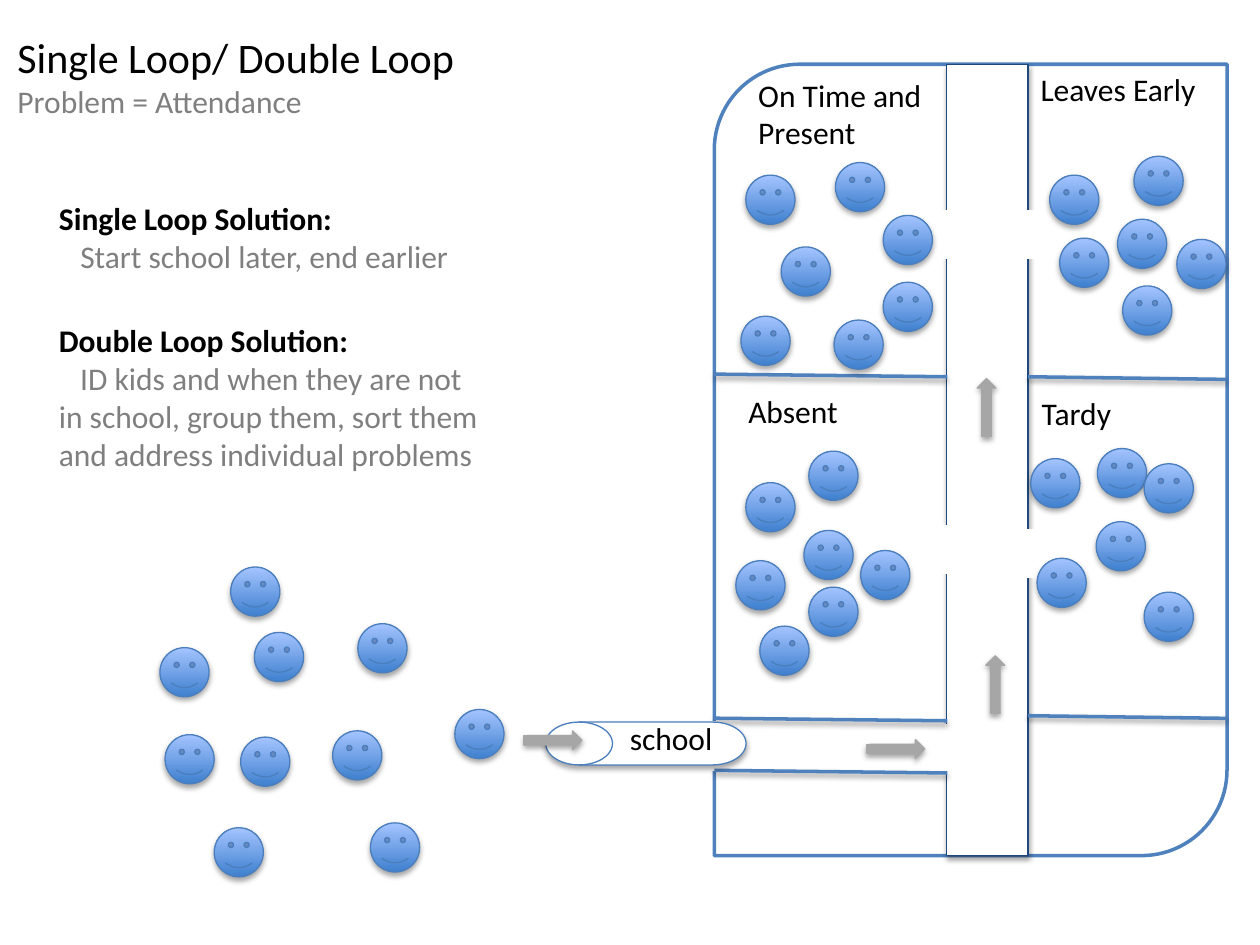
from pptx import Presentation
from pptx.dml.color import RGBColor
from pptx.enum.shapes import MSO_CONNECTOR, MSO_SHAPE as Preset
from pptx.enum.text import MSO_AUTO_SIZE
from pptx.oxml import parse_xml
from pptx.oxml.ns import nsdecls
from pptx.util import Pt

WHITE = RGBColor(0xFF, 0xFF, 0xFF)
BLACK = RGBColor(0x00, 0x00, 0x00)
GRAY = RGBColor(0x7F, 0x7F, 0x7F)
ARROW_GRAY = RGBColor(0xA6, 0xA6, 0xA6)
WALL_BLUE = RGBColor(0x4F, 0x81, 0xBD)
HALL_BLUE = RGBColor(0x1F, 0x49, 0x7D)
EDGE_BLUE = RGBColor(0x4B, 0x7E, 0xBC)
FACE_DARK = RGBColor(0x3F, 0x80, 0xCE)
FACE_LIGHT = RGBColor(0xA4, 0xC4, 0xFF)

FONT = "Calibri"
FACE_SIZE = 28.1
DOOR_SIZE = (28.8, 27.4)
ARROW_SIZE = (33.1, 10.8)
WALL_DROP = 1.5
LEFT_WALL = (408.2, 541.4)
RIGHT_WALL = (587.5, 700.6)

DOORS = [(398.2, 412.6), (527, 414), (573.1, 302.4),
         (526.3, 300.2), (584.6, 120.2), (526.3, 120.2)]
WALLS = [(LEFT_WALL, 213.8), (RIGHT_WALL, 215.3), (RIGHT_WALL, 409),
         (LEFT_WALL, 410.4), (LEFT_WALL, 440.2)]
STUDENTS = {
    "on time": [(423.4, 180.7), (446.4, 141.1), (476.6, 182.9), (477.4, 92.9),
                (504.7, 123.1), (504.7, 161.3), (426.2, 100.1)],
    "leaves early": [(599.8, 100.1), (605.5, 136.1), (641.5, 163.4),
                     (672.5, 136.8), (638.6, 125.3), (648, 89.3)],
    "absent": [(462.2, 335.5), (434.2, 357.8), (491.8, 314.6), (420.5, 320.4),
               (459.4, 303.1), (426.2, 275.8), (462.2, 257.8)],
    "tardy": [(592.6, 319), (589, 262.1), (626.4, 298.1), (653.8, 338.4),
              (627.1, 256.3), (653.8, 265)],
    "outside": [(137.5, 421.2), (131.8, 324), (145.4, 361.4), (259.9, 405.4),
                (211.7, 470.2), (122.4, 473), (204.5, 356.4), (94.3, 419.8),
                (91.4, 370.1), (190.1, 417.6)],
}
ROOM_LABELS = [("Absent", 420.5, 220.3, 66.2, 28.8),
               ("Tardy", 588.2, 221.8, 56.2, 28.8),
               ("On Time and\nPresent", 426.2, 39.6, 108.7, 51.1),
               ("Leaves Early", 587.5, 36.7, 104.4, 28.8)]


def add_shadow(shape, opacity=35):
    """Add a soft shadow below; call it after fill and line are set."""
    properties = shape._element.spPr
    properties.append(parse_xml(
        f'<a:effectLst {nsdecls("a")}>'
        f'<a:outerShdw blurRad="{Pt(3.1)}" dist="{Pt(1.8)}" dir="5400000" rotWithShape="0">'
        f'<a:srgbClr val="000000"><a:alpha val="{opacity * 1000}"/></a:srgbClr>'
        '</a:outerShdw></a:effectLst>'))


def add_outlined(slide, preset, left, top, width, height, line_color,
                 fill_color=WHITE, line_width=0.75, shadow=False, rotation=0):
    shape = slide.shapes.add_shape(preset, Pt(left), Pt(top), Pt(width), Pt(height))
    shape.rotation = rotation
    shape.fill.solid()
    shape.fill.fore_color.rgb = fill_color
    shape.line.color.rgb = line_color
    shape.line.width = Pt(line_width)
    if shadow:
        add_shadow(shape)
    else:
        shape.shadow.inherit = False
    return shape


def add_wall(slide, span, top):
    left, right = span
    wall = slide.shapes.add_connector(
        MSO_CONNECTOR.STRAIGHT, Pt(left), Pt(top), Pt(right), Pt(top + WALL_DROP))
    wall.line.color.rgb = WALL_BLUE
    wall.line.width = Pt(2)
    add_shadow(wall, 38)


def add_student(slide, left, top):
    face = add_outlined(slide, Preset.SMILEY_FACE, left, top,
                        FACE_SIZE, FACE_SIZE, EDGE_BLUE, shadow=True)
    face.fill.gradient()
    face.fill.gradient_angle = 90
    for stop, color, position in zip(face.fill.gradient_stops,
                                     (FACE_DARK, FACE_LIGHT), (0, 1)):
        stop.color.rgb = color
        stop.position = position


def add_arrow(slide, left, top, rotation=0):
    add_outlined(slide, Preset.STRIPED_RIGHT_ARROW, left, top, *ARROW_SIZE,
                 ARROW_GRAY, ARROW_GRAY, shadow=True, rotation=rotation)


def add_text(slide, text, left, top, width, height, wrap=False):
    box = slide.shapes.add_textbox(Pt(left), Pt(top), Pt(width), Pt(height))
    frame = box.text_frame
    frame.word_wrap = wrap
    frame.auto_size = MSO_AUTO_SIZE.SHAPE_TO_FIT_TEXT
    frame.text = text
    for paragraph in frame.paragraphs:
        for run in paragraph.runs:
            run.font.name = FONT
            run.font.size = Pt(18)
            run.font.color.rgb = BLACK
    return frame.paragraphs


def add_title(slide):
    title, problem = add_text(slide, "Single Loop/ Double Loop\nProblem = Attendance",
                              2.9, 14.4, 275, 58.3)
    title.runs[0].font.size = Pt(24)
    problem.runs[0].font.color.rgb = GRAY


def add_solution(slide, heading, detail, *place, wrap=False):
    """Bold heading over a gray detail with an indented first line."""
    first, second = add_text(slide, f"{heading}\n{detail}", *place, wrap=wrap)
    first.runs[0].font.bold = True
    second.runs[0].font.color.rgb = GRAY
    second._p.get_or_add_pPr().set("indent", str(Pt(12.2)))


def add_building(slide):
    add_outlined(slide, Preset.ROUND_2_DIAG_RECTANGLE, 408.2, 36.7, 293, 452.2,
                 WALL_BLUE, line_width=2)
    add_outlined(slide, Preset.RECTANGLE, 540.7, 36.7, 46.8, 452.2,
                 HALL_BLUE, shadow=True)
    for left, top in DOORS:
        add_outlined(slide, Preset.RECTANGLE, left, top, *DOOR_SIZE, WHITE)
    for span, top in WALLS:
        add_wall(slide, span, top)


def add_entrance(slide):
    add_outlined(slide, Preset.FLOWCHART_DIRECT_ACCESS_STORAGE, 311.8, 412.6,
                 114.5, 24.5, EDGE_BLUE, shadow=True, rotation=180)
    add_text(slide, "school", 352.8, 407.5, 61.9, 28.8)


def main():
    presentation = Presentation()
    presentation.slide_width, presentation.slide_height = Pt(720), Pt(540)
    slide = presentation.slides.add_slide(presentation.slide_layouts[6])

    add_building(slide)
    for group in STUDENTS.values():
        for left, top in group:
            add_student(slide, left, top)
    add_title(slide)
    for label in ROOM_LABELS:
        add_text(slide, *label)
    add_entrance(slide)
    for left, top, rotation in [(495.4, 422.6, 0), (552.2, 385.9, 270),
                                (547.2, 227.5, 270), (299.5, 417.6, 0)]:
        add_arrow(slide, left, top, rotation)
    add_solution(slide, "Single Loop Solution:", "Start school later, end earlier",
                 26.6, 110.2, 241.2, 51.1)
    add_solution(slide, "Double Loop Solution:",
                 "ID kids and when they are not in school, group them, "
                 "sort them and address individual problems",
                 26.6, 180, 262.1, 95, wrap=True)
    presentation.save("out.pptx")


if __name__ == "__main__":
    main()
